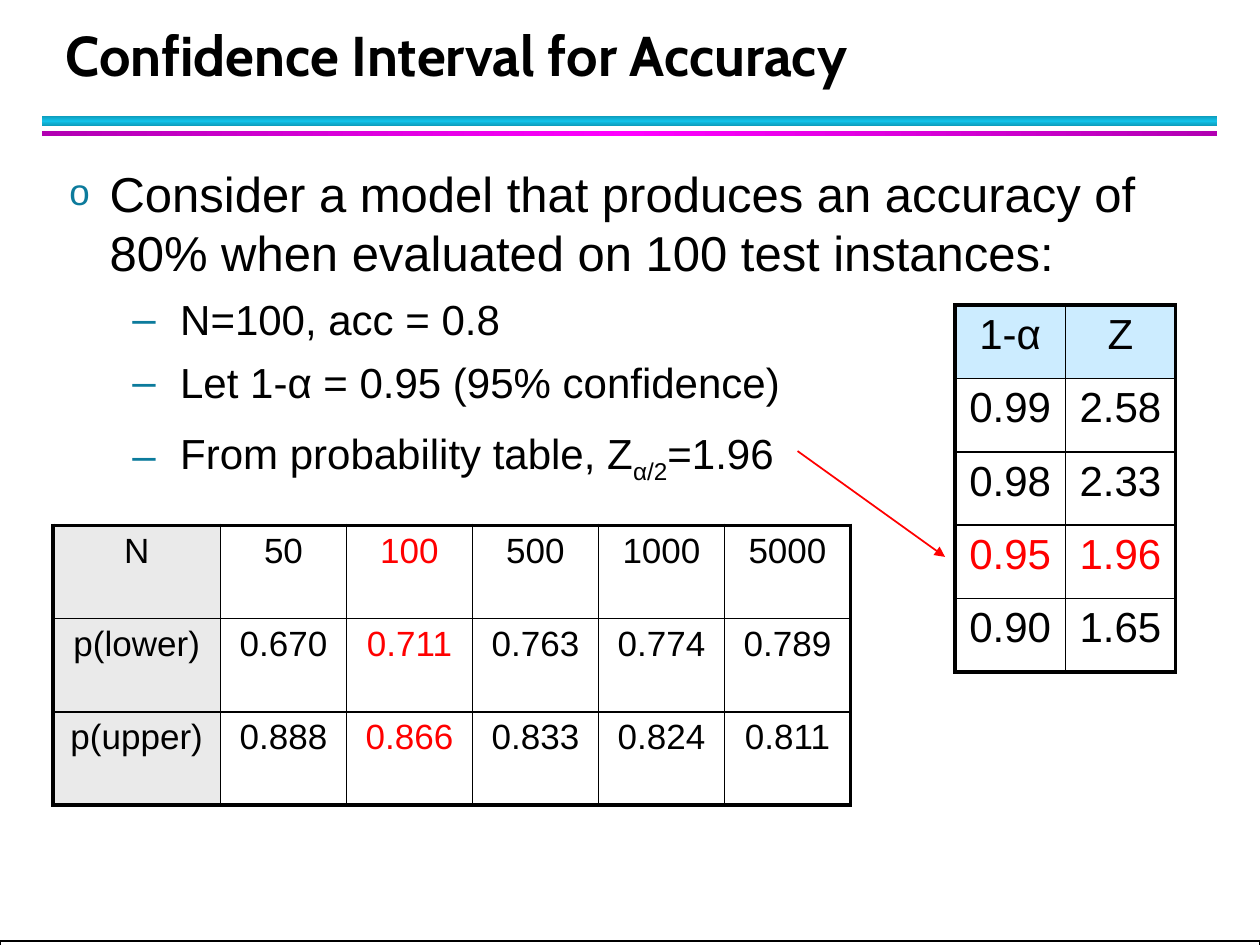
"""Build the slide on the confidence interval for accuracy."""
from copy import deepcopy

from lxml import etree
from pptx import Presentation
from pptx import util as u
from pptx.dml.color import RGBColor
from pptx.enum import shapes, text
from pptx.oxml import ns

BLACK = RGBColor(0, 0, 0)
WHITE = RGBColor(0xFF, 0xFF, 0xFF)
RED = RGBColor(0xFF, 0, 0)
TEAL = RGBColor(0x0C, 0x7B, 0x9C)
PALE_BLUE = RGBColor(0xCC, 0xEC, 0xFF)
PALE_GRAY = RGBColor(0xEA, 0xEA, 0xEA)
CYANS = RGBColor(0x0E, 0x9B, 0xBA), RGBColor(0x12, 0xC2, 0xE9)
MAGENTAS = RGBColor(0xB2, 0, 0xB2), RGBColor(0xFF, 0, 0xFF)

TITLE = "Confidence Interval for Accuracy"
# level, space before, runs of (text, is subscript)
POINTS = [
    (0, 0, [("Consider a model that produces an accuracy of 80% when "
             "evaluated on 100 test instances:", False)]),
    (1, 3, [("N=100, acc = 0.8", False)]),
    (1, 3, [("Let 1-α = 0.95 (95% confidence)", False)]),
    (1, 8, [("From probability table, Z", False), ("α/2", True), ("=1.96", False)]),
]
LEVELS = [  # size, margin, hanging indent, bullet, bullet percent
    (28, 0.32, 0.32, "o", 75),
    (24, 0.88, 0.38, "–", 100),
]
Z_ROWS = [("1-α", "Z"), ("0.99", "2.58"), ("0.98", "2.33"),
          ("0.95", "1.96"), ("0.90", "1.65")]
BOUND_ROWS = [
    ("N", "50", "100", "500", "1000", "5000"),
    ("p(lower)", "0.670", "0.711", "0.763", "0.774", "0.789"),
    ("p(upper)", "0.888", "0.866", "0.833", "0.824", "0.811"),
]
BARS = [  # top, height, colours, angle
    (0.92, 0.08, CYANS, 90),
    (1.04, 0.04, MAGENTAS, 0),
]


def inches(*values):
    return [u.Inches(value) for value in values]


def add_element(parent, tag, **attributes):
    return etree.SubElement(parent, ns.qn(tag), attributes)


def add_rectangle(page, *place):
    box = page.shapes.add_shape(shapes.MSO_SHAPE.RECTANGLE, *inches(*place))
    box.shadow.inherit = False
    return box


def add_bar(page, top, height, colors, angle):
    bar = add_rectangle(page, 0.33, top, 9.33, height)
    bar.line.fill.background()
    bar.fill.gradient()
    bar.fill.gradient_angle = angle
    edge, middle = colors
    stops = bar.fill.gradient_stops
    stops[0].color.rgb = stops[1].color.rgb = edge
    first = bar._element.spPr.find(".//" + ns.qn("a:gs"))
    first.addnext(deepcopy(first))
    center = bar.fill.gradient_stops[1]
    center.position, center.color.rgb = 0.5, middle


def style(paragraph, size, color=BLACK, name="Arial"):
    paragraph.font.size = u.Pt(size)
    paragraph.font.name = name
    paragraph.font.color.rgb = color


def place(box, *position):
    box.left, box.top, box.width, box.height = inches(*position)
    box.text_frame.auto_size = text.MSO_AUTO_SIZE.NONE


def fill_title(box):
    place(box, 0.42, 0.17, 9.06, 0.58)
    box.text_frame.text = TITLE
    box.text_frame.vertical_anchor = text.MSO_ANCHOR.BOTTOM
    para = box.text_frame.paragraphs[0]
    para.alignment = text.PP_ALIGN.LEFT
    para.line_spacing = u.Pt(36)
    style(para, 32, name="Cabin")
    para.font.bold = True


def fill_body(box):
    place(box, 0.45, 1.25, 9.1, 5.67)
    frame = box.text_frame
    for index, (level, before, spans) in enumerate(POINTS):
        para = frame.add_paragraph() if index else frame.paragraphs[0]
        size, margin, hanging, bullet, percent = LEVELS[level]
        para.level = level
        para.space_before, para.space_after = u.Pt(before), u.Pt(4)
        properties = para._p.get_or_add_pPr()
        properties.set("marL", str(u.Inches(margin)))
        properties.set("indent", str(-u.Inches(hanging)))
        bullet_color = add_element(properties, "a:buClr")
        add_element(bullet_color, "a:srgbClr", val=str(TEAL))
        add_element(properties, "a:buSzPct", val=str(percent * 1000))
        add_element(properties, "a:buFont", typeface="Arial")
        add_element(properties, "a:buChar", char=bullet)
        style(para, size)
        for words, subscript in spans:
            span = para.add_run()
            span.text = words
            if subscript:
                span.font._element.set("baseline", "-25000")


def add_border(cell, side, width):
    line = add_element(cell._tc.get_or_add_tcPr(), "a:ln" + side, w=str(u.Pt(width)))
    add_element(add_element(line, "a:solidFill"), "a:srgbClr", val=str(BLACK))


def add_grid(page, rows, left, top, widths, height, size, is_header, header_fill, is_red):
    last_row, last_column = len(rows) - 1, len(widths) - 1
    frame = page.shapes.add_table(len(rows), len(widths),
                                  *inches(left, top, sum(widths), height * len(rows)))
    table = frame.table
    table.first_row = table.horz_banding = False
    for column, width in zip(table.columns, widths):
        column.width = u.Inches(width)
    for r, values in enumerate(rows):
        table.rows[r].height = u.Inches(height)
        for c, value in enumerate(values):
            cell = table.cell(r, c)
            outer = {"L": c == 0, "R": c == last_column, "T": r == 0, "B": r == last_row}
            for side, heavy in outer.items():
                add_border(cell, side, 2.25 if heavy else 1)
            if is_header(r, c):
                cell.fill.solid()
                cell.fill.fore_color.rgb = header_fill
            else:
                cell.fill.background()
            cell.text = value
            para = cell.text_frame.paragraphs[0]
            para.alignment = text.PP_ALIGN.CENTER
            para.space_after = u.Pt(4)
            style(para, size, RED if is_red(r, c) else BLACK)


def add_arrow(page, *ends):
    arrow = page.shapes.add_connector(shapes.MSO_CONNECTOR.STRAIGHT, *inches(*ends))
    arrow.line.color.rgb = RED
    arrow.line.width = u.Pt(1)
    add_element(arrow.line._get_or_add_ln(), "a:tailEnd", type="triangle")
    add_element(arrow._element.spPr, "a:effectLst")


def main():
    deck = Presentation()
    deck.slide_width, deck.slide_height = inches(10, 7.5)
    page = deck.slides.add_slide(deck.slide_layouts[1])
    for bar in BARS:
        add_bar(page, *bar)
    footer = add_rectangle(page, 0, 7.47, 10, 0.33)
    footer.fill.solid()
    footer.fill.fore_color.rgb = WHITE
    footer.line.color.rgb = BLACK
    footer.line.width = u.Pt(1)
    fill_title(page.shapes.title)
    fill_body(page.placeholders[1])
    add_grid(page, Z_ROWS, 7.58, 2.42, [0.875] * 2, 0.583, 24,
             lambda r, c: r == 0, PALE_BLUE, lambda r, c: r == 3)
    add_arrow(page, 6.33, 3.58, 7.5, 4.42)
    add_grid(page, BOUND_ROWS, 0.42, 4.17, [1.33] + [1] * 5, 0.74, 20,
             lambda r, c: c == 0, PALE_GRAY, lambda r, c: c == 2)
    deck.save("out.pptx")


if __name__ == "__main__":
    main()
